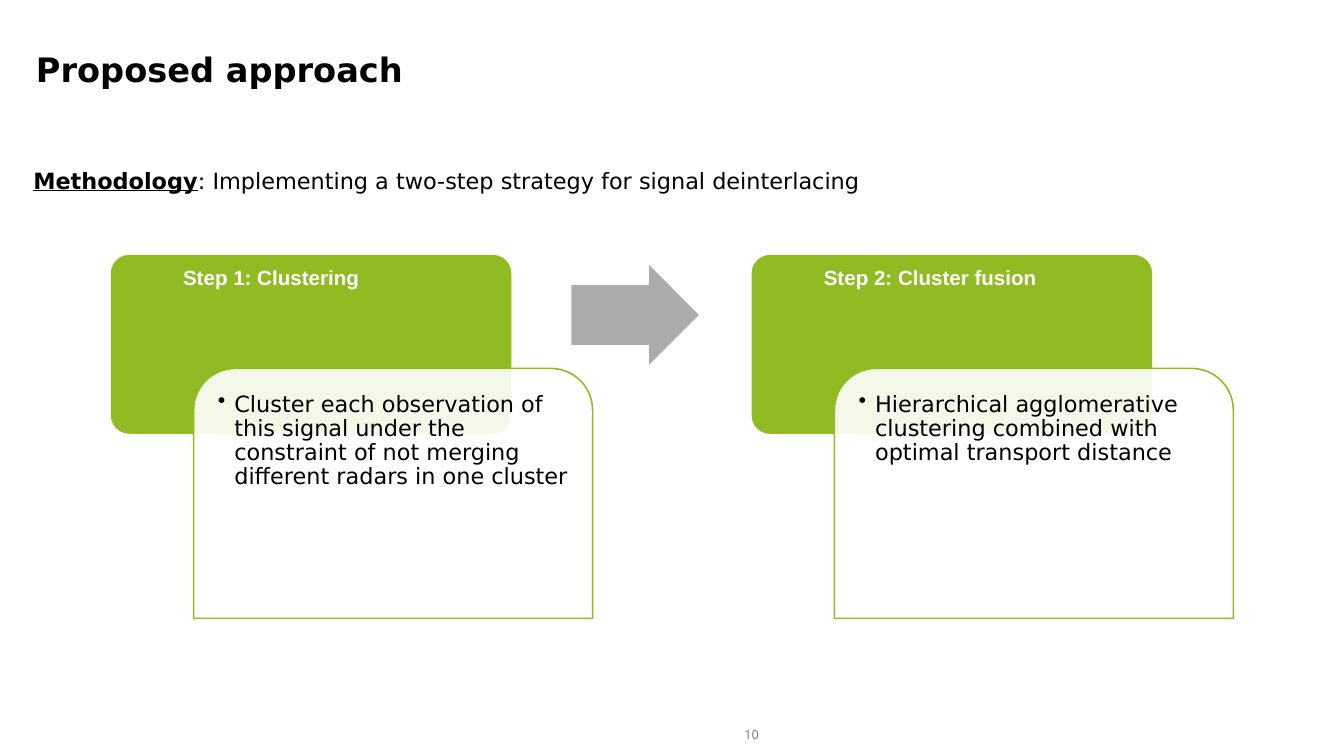
from dataclasses import dataclass

from lxml.etree import SubElement
from pptx import Presentation
from pptx.dml.color import RGBColor
from pptx.enum.shapes import MSO_SHAPE as Preset
from pptx.enum.text import MSO_ANCHOR as Anchor, MSO_AUTO_SIZE as AutoSize, PP_ALIGN as Align
from pptx.oxml.ns import qn
from pptx.util import Cm, Pt

BLACK = RGBColor(0x00, 0x00, 0x00)
WHITE = RGBColor(0xFF, 0xFF, 0xFF)
GREEN = RGBColor(0x90, 0xBB, 0x23)
ARROW_GRAY = RGBColor(0xAB, 0xAB, 0xAB)
NUMBER_GRAY = RGBColor(0x81, 0x81, 0x81)
BODY_FONT = "DejaVu Sans"

FIRST_LEFT, STEP_PITCH, STEP_TOP = 2.11, 12.11, 4.83
CARD_WIDTH = 7.54
PADDING = 0.23


@dataclass(frozen=True)
class Box:
    """Position and size in centimetres."""
    left: float
    top: float
    width: float
    height: float

    def lengths(self) -> tuple:
        return Cm(self.left), Cm(self.top), Cm(self.width), Cm(self.height)


@dataclass(frozen=True)
class Step:
    heading: str
    detail: str


STEPS = [
    Step("Step 1: Clustering",
         "Cluster each observation of this signal under the constraint "
         "of not merging different radars in one cluster"),
    Step("Step 2: Cluster fusion",
         "Hierarchical agglomerative clustering combined with "
         "optimal transport distance"),
]


def set_frame(frame, insets: tuple, anchor=Anchor.TOP) -> None:
    frame.word_wrap = True
    frame.auto_size = AutoSize.NONE
    frame.vertical_anchor = anchor
    (frame.margin_left, frame.margin_top,
     frame.margin_right, frame.margin_bottom) = map(Cm, insets)


def add_text(slide, box: Box, insets: tuple, anchor=Anchor.TOP):
    """Add a text box and return its first paragraph."""
    frame = slide.shapes.add_textbox(*box.lengths()).text_frame
    set_frame(frame, insets, anchor)
    return frame.paragraphs[0]


def add_run(paragraph, text: str, size: float, color: RGBColor,
            font_name: str = BODY_FONT, bold: bool = False, underline: bool = False) -> None:
    run = paragraph.add_run()
    run.text = text
    font = run.font
    font.name, font.size, font.bold, font.underline = font_name, Pt(size), bold, underline
    font.color.rgb = color


def add_panel(slide, preset, box: Box, fill: RGBColor, outline: RGBColor | None = None):
    panel = slide.shapes.add_shape(preset, *box.lengths())
    panel.shadow.inherit = False
    panel.fill.solid()
    panel.fill.fore_color.rgb = fill
    if outline is None:
        panel.line.fill.background()
    else:
        panel.line.color.rgb = outline
        panel.line.width = Pt(0.85)
    return panel


def set_opacity(panel, percent: int) -> None:
    color = panel.fill._xPr.find(qn("a:solidFill"))[0]
    SubElement(color, qn("a:alpha"), val=str(percent * 1000))


def add_bullet(paragraph, indent: float) -> None:
    properties = paragraph._p.get_or_add_pPr()
    properties.set("marL", str(Cm(indent)))
    properties.set("indent", str(-Cm(indent)))
    SubElement(properties, qn("a:buChar"), char="•")


def add_step(slide, step: Step, left: float) -> None:
    # Green heading card
    heading_card = add_panel(slide, Preset.ROUNDED_RECTANGLE,
                             Box(left, STEP_TOP, CARD_WIDTH, 3.35), GREEN, GREEN)
    heading_card.adjustments[0] = 0.1
    heading = add_text(slide, Box(left + 1.12, STEP_TOP, 5.28, 2.24),
                       (PADDING, PADDING, PADDING, 0.13))
    heading.line_spacing = 0.9
    add_run(heading, step.heading, 11, WHITE, "Arial", bold=True)

    # Translucent detail card overlapping it
    card = Box(left + 1.55, STEP_TOP + 2.13, CARD_WIDTH, 4.72)
    detail_card = add_panel(slide, Preset.ROUND_2_SAME_RECTANGLE, card, WHITE, GREEN)
    set_opacity(detail_card, 90)
    detail_box = Box(card.left + PADDING, card.top + PADDING,
                     card.width - 2 * PADDING, card.height - PADDING)
    detail = add_text(slide, detail_box, (PADDING,) * 4)
    detail.line_spacing = 0.9
    add_bullet(detail, 0.31)
    add_run(detail, step.detail, 12, BLACK)


def main() -> None:
    deck = Presentation()
    deck.slide_width, deck.slide_height = Cm(25.4), Cm(14.28)
    slide = deck.slides.add_slide(deck.slide_layouts[5])

    # Title
    title = slide.shapes.title
    title.left, title.top, title.width, title.height = Box(0.43, 0.79, 24.26, 1.57).lengths()
    set_frame(title.text_frame, (0.25, 0.13, 0.25, 0.13))
    title_line = title.text_frame.paragraphs[0]
    title_line.alignment = Align.LEFT
    add_run(title_line, "Proposed approach", 18, BLACK, bold=True)

    # Methodology statement
    methodology = add_text(slide, Box(0.38, 3.02, 24.31, 1.12), (0.25, 0.13, 0.25, 0.13))
    add_run(methodology, "Methodology", 12, BLACK, bold=True, underline=True)
    add_run(methodology, ": Implementing a two-step strategy for signal deinterlacing", 12, BLACK)

    # Steps and the arrow between them
    for index, step in enumerate(STEPS):
        add_step(slide, step, FIRST_LEFT + index * STEP_PITCH)
    arrow = add_panel(slide, Preset.RIGHT_ARROW, Box(10.8, 5.01, 2.41, 1.88), ARROW_GRAY)
    arrow.adjustments[0] = 0.6
    arrow.adjustments[1] = 0.5

    # Slide number
    number = add_text(slide, Box(13.34, 13.61, 1.73, 0.51), (0.2, 0.1, 0.2, 0.1), Anchor.MIDDLE)
    number.alignment = Align.CENTER
    add_run(number, "10", 6.8, NUMBER_GRAY, "Noto Sans")

    deck.save("out.pptx")


if __name__ == "__main__":
    main()
